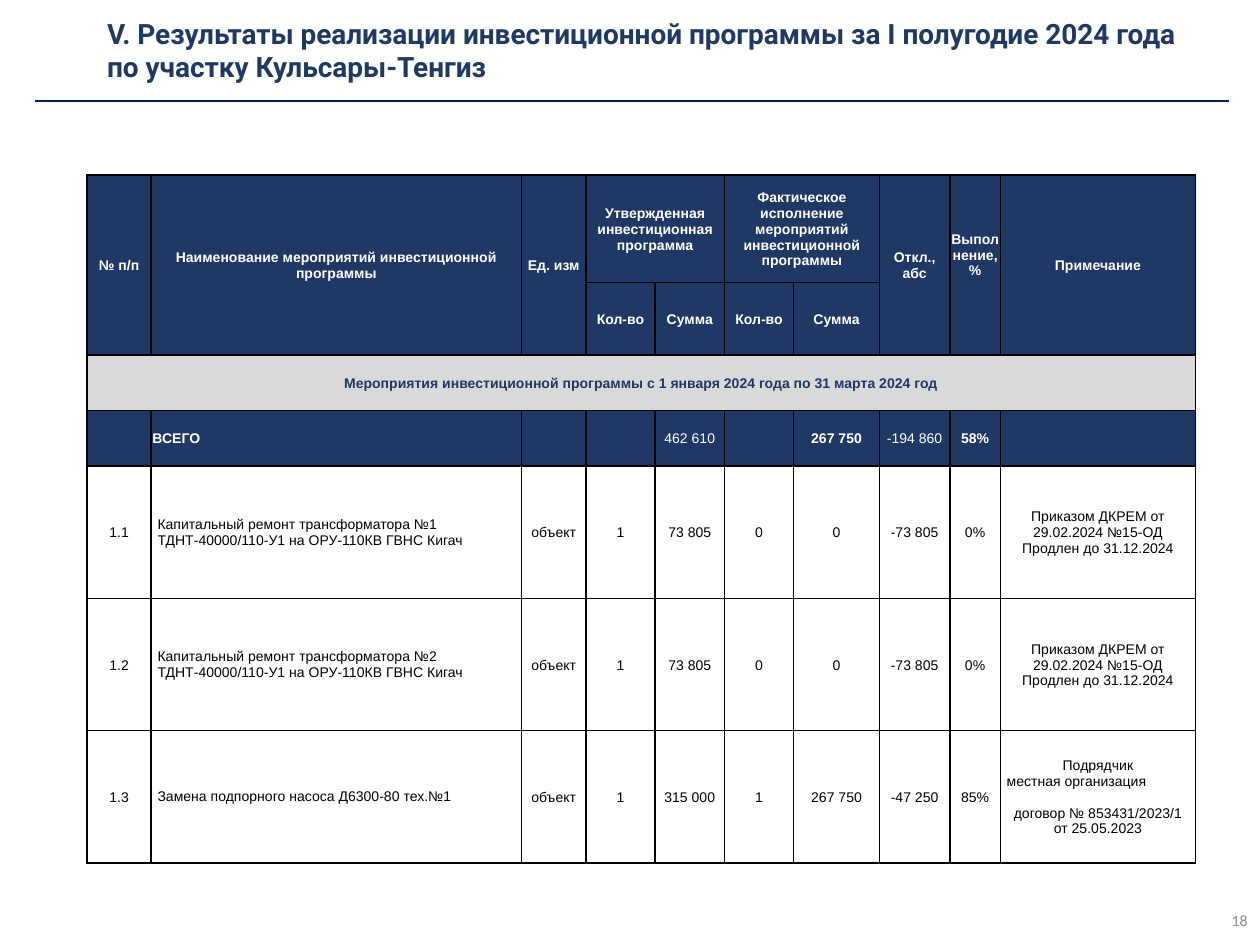
from dataclasses import dataclass

from lxml import etree
from pptx import Presentation
from pptx.dml.color import RGBColor
from pptx.enum.shapes import MSO_CONNECTOR
from pptx.enum.text import MSO_ANCHOR, MSO_AUTO_SIZE, PP_ALIGN
from pptx.oxml.ns import qn
from pptx.util import Inches, Pt

LEFT, CENTER, RIGHT = PP_ALIGN.LEFT, PP_ALIGN.CENTER, PP_ALIGN.RIGHT
MIDDLE = MSO_ANCHOR.MIDDLE
STRAIGHT = MSO_CONNECTOR.STRAIGHT


@dataclass(frozen=True)
class Theme:
    navy: str = "203864"
    rule: str = "002060"
    band: str = "D9D9D9"
    white: str = "FFFFFF"
    black: str = "000000"
    gray: str = "8C8C8C"
    title_font: str = "Roboto"
    table_font: str = "Arial"
    number_font: str = "Calibri"
    title_size: int = 16
    table_size: int = 8
    number_size: int = 9
    line_width: int = 1


THEME = Theme()
SLIDE_WIDTH, SLIDE_HEIGHT = 10, 7.5
TITLE = ["V. Результаты реализации инвестиционной программы за I полугодие 2024 года",
         "по участку Кульсары-Тенгиз"]
PAGE_NUMBER = "18"

COLUMNS = [0.51, 2.94, 0.51, 0.55, 0.55, 0.55, 0.68, 0.56, 0.4, 1.55]
ROWS = [0.85, 0.55, 0.44, 0.44, 1.05, 1.05, 1.05]
TABLE_LEFT, TABLE_TOP = 0.69, 1.39
HEADER_ROWS, BAND_ROW, TOTAL_ROW = 2, 2, 3
NAME_COLUMN, PERCENT_COLUMN, NOTE_COLUMN = 1, 8, 9
TOTAL_PLAIN_COLUMNS = (4, 7)

EXTENSION = "Приказом ДКРЕМ от 29.02.2024 №15-ОД\nПродлен до 31.12.2024"
CONTENT = [
    ["№ п/п", "Наименование мероприятий инвестиционной программы", "Ед. изм",
     "Утвержденная инвестиционная программа", "",
     "Фактическое исполнение мероприятий инвестиционной программы", "",
     "Откл., абс", "Выполнение,\n%", "Примечание"],
    ["", "", "", "Кол-во", "Сумма", "Кол-во", "Сумма", "", "", ""],
    ["Мероприятия инвестиционной программы с 1 января 2024 года по 31 марта 2024 год"]
    + [""] * 9,
    ["", "ВСЕГО", "", "", "462 610", "", "267 750", "-194 860", "58%", ""],
    ["1.1", "Капитальный ремонт трансформатора №1 ТДНТ-40000/110-У1 на ОРУ-110КВ ГВНС Кигач",
     "объект", "1", "73 805", "0", "0", "-73 805", "0%", EXTENSION],
    ["1.2", "Капитальный ремонт трансформатора №2 ТДНТ-40000/110-У1 на ОРУ-110КВ ГВНС Кигач",
     "объект", "1", "73 805", "0", "0", "-73 805", "0%", EXTENSION],
    ["1.3", "Замена подпорного насоса Д6300-80 тех.№1",
     "объект", "1", "315 000", "1", "267 750", "-47 250", "85%",
     "Подрядчик\nместная организация\nдоговор № 853431/2023/1\nот 25.05.2023"],
]
MERGES = [((0, column), (1, column)) for column in (0, 1, 2, 7, 8, 9)]
MERGES += [((0, 3), (0, 4)), ((0, 5), (0, 6)), ((2, 0), (2, 9))]


def write(text_frame, lines, font, size, color, bold=False, align=LEFT):
    for index, line in enumerate(lines):
        paragraph = text_frame.paragraphs[0] if index == 0 else text_frame.add_paragraph()
        paragraph.alignment = align
        run = paragraph.add_run()
        run.text = line
        run.font.name = font
        run.font.size = Pt(size)
        run.font.bold = bold
        run.font.color.rgb = RGBColor.from_string(color)


def set_borders(cell):
    properties = cell._tc.get_or_add_tcPr()
    for index, side in enumerate(("lnL", "lnR", "lnT", "lnB")):
        line = etree.Element(qn(f"a:{side}"), w=str(Pt(THEME.line_width)))
        fill = etree.SubElement(line, qn("a:solidFill"))
        etree.SubElement(fill, qn("a:srgbClr"), val=THEME.black)
        properties.insert(index, line)


def cell_style(row, column):
    if row < HEADER_ROWS:
        return THEME.navy, THEME.white, True
    if row == BAND_ROW:
        return THEME.band, THEME.navy, True
    if row == TOTAL_ROW:
        return THEME.navy, THEME.white, column not in TOTAL_PLAIN_COLUMNS
    return THEME.white, THEME.black, False


def format_cell(cell, row, column, text):
    fill, color, bold = cell_style(row, column)
    is_name = column == NAME_COLUMN and row >= TOTAL_ROW
    margin = 0.05 if is_name and row > TOTAL_ROW else 0.01
    cell.margin_left = cell.margin_right = cell.margin_top = Inches(margin)
    cell.margin_bottom = Inches(margin if margin > 0.01 else 0)
    cell.vertical_anchor = MIDDLE
    cell.fill.solid()
    cell.fill.fore_color.rgb = RGBColor.from_string(fill)
    set_borders(cell)
    if text:
        write(cell.text_frame, text.split("\n"), THEME.table_font, THEME.table_size,
              color, bold, LEFT if is_name else CENTER)


def add_program_table(slide):
    table = slide.shapes.add_table(
        len(ROWS), len(COLUMNS), Inches(TABLE_LEFT), Inches(TABLE_TOP),
        Inches(sum(COLUMNS)), Inches(sum(ROWS))).table
    for column, width in zip(table.columns, COLUMNS):
        column.width = Inches(width)
    for row, height in zip(table.rows, ROWS):
        row.height = Inches(height)
    for start, end in MERGES:
        table.cell(*start).merge(table.cell(*end))
    for row, texts in enumerate(CONTENT):
        for column, text in enumerate(texts):
            format_cell(table.cell(row, column), row, column, text)

    table.cell(0, PERCENT_COLUMN).margin_bottom = Inches(0.17)
    contractor = table.cell(len(ROWS) - 1, NOTE_COLUMN).text_frame.paragraphs[1]
    contractor.alignment = LEFT
    contractor.space_after = Pt(9)
    contractor._p.get_or_add_pPr().set("marL", str(Inches(0.04)))


def add_title(slide):
    title = slide.shapes.title
    title.left, title.top = Inches(0.75), Inches(0.08)
    title.width, title.height = Inches(9.16), Inches(0.63)
    frame = title.text_frame
    frame.auto_size = MSO_AUTO_SIZE.NONE
    frame.vertical_anchor = MIDDLE
    write(frame, TITLE, THEME.title_font, THEME.title_size, THEME.navy, True)
    for paragraph in frame.paragraphs:
        paragraph.space_before = Pt(0)


def add_rule(slide):
    rule = slide.shapes.add_connector(
        STRAIGHT, Inches(0.28), Inches(0.8), Inches(9.75), Inches(0.8))
    rule.line.color.rgb = RGBColor.from_string(THEME.rule)
    rule.line.width = Pt(THEME.line_width)
    etree.SubElement(rule._element.spPr, qn("a:effectLst"))


def add_page_number(slide):
    width, height = 2.25, 0.4
    box = slide.shapes.add_textbox(
        Inches(SLIDE_WIDTH - width), Inches(SLIDE_HEIGHT - height),
        Inches(width), Inches(height))
    box.text_frame.word_wrap = True
    box.text_frame.vertical_anchor = MIDDLE
    write(box.text_frame, [PAGE_NUMBER], THEME.number_font, THEME.number_size,
          THEME.gray, align=RIGHT)


def main():
    presentation = Presentation()
    presentation.slide_width = Inches(SLIDE_WIDTH)
    presentation.slide_height = Inches(SLIDE_HEIGHT)
    slide = presentation.slides.add_slide(presentation.slide_layouts[5])
    add_page_number(slide)
    add_title(slide)
    add_program_table(slide)
    add_rule(slide)
    presentation.save("out.pptx")


if __name__ == "__main__":
    main()
